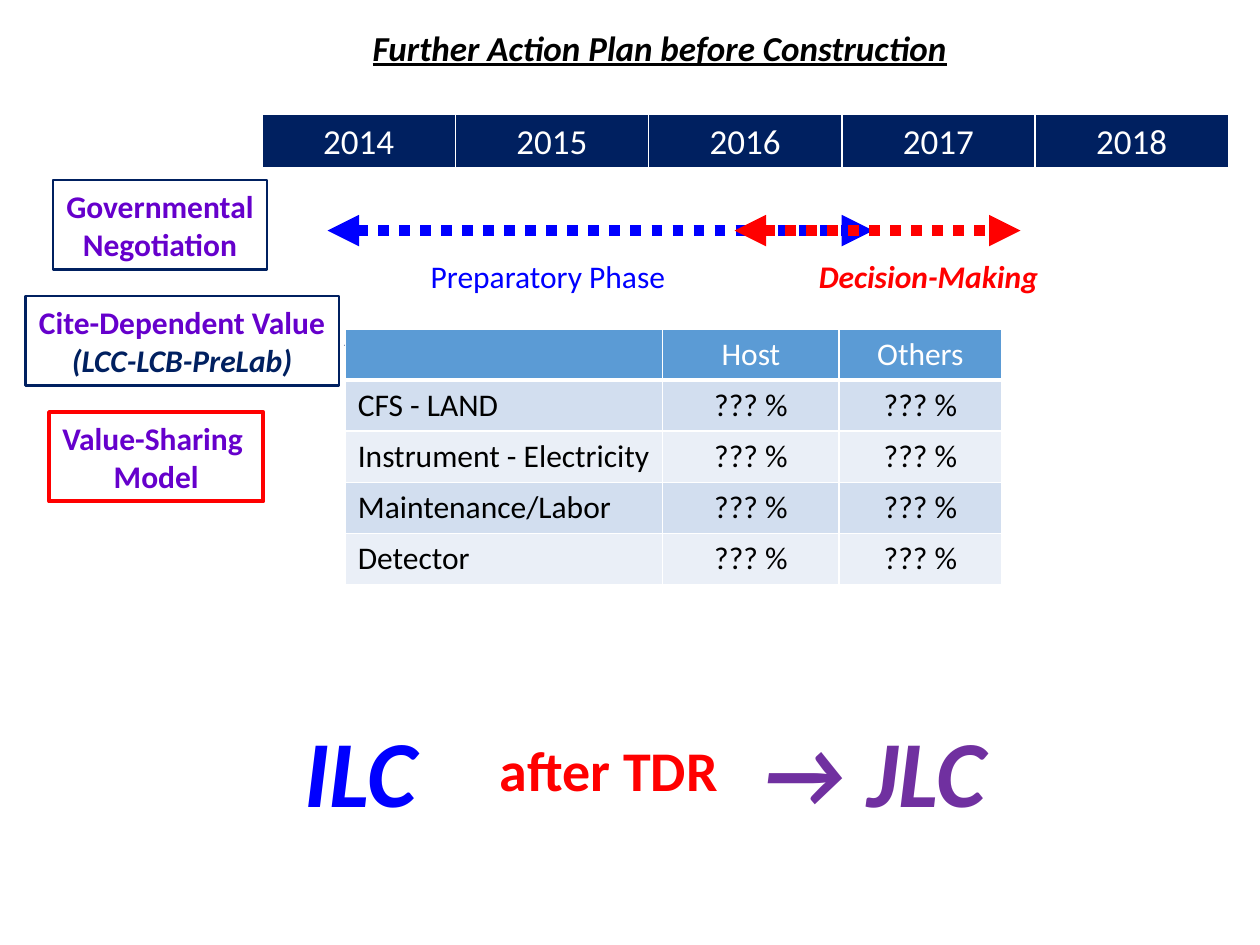
from lxml import etree
from pptx import Presentation
from pptx.dml.color import RGBColor
from pptx.enum.dml import MSO_LINE
from pptx.enum.shapes import MSO_CONNECTOR, MSO_SHAPE
from pptx.enum.text import MSO_ANCHOR, PP_ALIGN
from pptx.oxml.ns import qn
from pptx.util import Inches, Pt

LEFT, CENTER = PP_ALIGN.LEFT, PP_ALIGN.CENTER
MIDDLE = MSO_ANCHOR.MIDDLE
DOTTED = MSO_LINE.ROUND_DOT  # written as sysDot
FONT = "Calibri"
COLORS = {
    "navy": "002060", "violet": "6600CC", "purple": "7030A0",
    "blue": "0000FF", "red": "FF0000", "black": "000000", "white": "FFFFFF",
    "header": "5B9BD5", "band_dark": "D2DEEF", "band_light": "EAEFF7",
}


def rgb(name):
    return RGBColor.from_string(COLORS[name])


def style(paragraph, size, color, bold=False, italic=False, underline=False, align=LEFT):
    paragraph.alignment = align
    font = paragraph.font
    font.name, font.size = FONT, Pt(size)
    font.bold, font.italic, font.underline = bold, italic, underline
    font.color.rgb = rgb(color)


def add_label(slide, box, text, size, color, **look):
    label = slide.shapes.add_textbox(*map(Inches, box))
    label.text_frame.word_wrap = False
    paragraph = label.text_frame.paragraphs[0]
    paragraph.text = text
    style(paragraph, size, color, **look)


def add_topic(slide, box, lines, frame="navy", weight=1.5):
    """Framed two-line topic; lines are (text, color, italic)."""
    topic = slide.shapes.add_shape(MSO_SHAPE.RECTANGLE, *map(Inches, box))
    topic.shadow.inherit = False
    topic.fill.background()
    topic.line.color.rgb = rgb(frame)
    topic.line.width = Pt(weight)
    text_frame = topic.text_frame
    text_frame.word_wrap = False
    for i, (text, color, italic) in enumerate(lines):
        paragraph = text_frame.add_paragraph() if i else text_frame.paragraphs[0]
        paragraph.text = text
        style(paragraph, 18, color, bold=True, italic=italic, align=CENTER)


def add_period(slide, start, end, y, color, dash=None):
    """Thick double-headed arrow."""
    arrow = slide.shapes.add_connector(
        MSO_CONNECTOR.STRAIGHT, Inches(start), Inches(y), Inches(end), Inches(y))
    arrow.line.color.rgb = rgb(color)
    arrow.line.width = Pt(6)
    if dash:
        arrow.line.dash_style = dash
    line_xml = arrow.line._get_or_add_ln()
    for end_tag in ("a:headEnd", "a:tailEnd"):
        etree.SubElement(line_xml, qn(end_tag), type="triangle")
    etree.SubElement(arrow._element.spPr, qn("a:effectLst"))


def set_cell(cell, text, size, color, fill, align, bottom):
    cell_xml = cell._tc.get_or_add_tcPr()
    for side, weight in (("L", 1), ("R", 1), ("T", 1), ("B", bottom)):
        border = etree.SubElement(cell_xml, qn("a:ln" + side), w=str(Pt(weight)))
        solid = etree.SubElement(border, qn("a:solidFill"))
        etree.SubElement(solid, qn("a:srgbClr"), val=COLORS["white"])
    cell.fill.solid()
    cell.fill.fore_color.rgb = rgb(fill)
    cell.vertical_anchor = MIDDLE
    paragraph = cell.text_frame.paragraphs[0]
    paragraph.text = text
    style(paragraph, size, color, align=align)


def add_grid(slide, box, rows, widths, size, header_fill):
    """Table with a header row, then banded rows led by a left-aligned name."""
    grid = slide.shapes.add_table(len(rows), len(widths), *map(Inches, box)).table
    for column, width in zip(grid.columns, widths):
        column.width = Inches(width)
    for r, row in enumerate(rows):
        band = "band_dark" if r % 2 else "band_light"
        for c, text in enumerate(row):
            header = r == 0
            set_cell(grid.cell(r, c), text, size,
                     "white" if header else "black",
                     header_fill if header else band,
                     CENTER if header or c else LEFT,
                     3 if header else 1)


def add_years(slide, box):
    years = [str(year) for year in range(2014, 2019)]
    add_grid(slide, box, [years], [box[2] / len(years)] * len(years), 20, "navy")


def add_negotiation(slide, x, y):
    add_topic(slide, (x, y, 1.7, 0.71),
              [("Governmental", "violet", False), ("Negotiation", "violet", False)])
    add_label(slide, (x + 2.9, y + 0.56, 2.08, 0.4), "Preparatory Phase", 18, "blue")
    add_label(slide, (x + 5.98, y + 0.56, 1.96, 0.4), "Decision-Making", 18, "red",
              bold=True, italic=True)
    add_period(slide, x + 2.18, x + 6.51, y + 0.4, "blue", DOTTED)
    add_period(slide, x + 5.41, x + 7.68, y + 0.4, "red", DOTTED)


def add_dependent_value(slide, x, y):
    add_topic(slide, (x, y, 2.49, 0.71),
              [("Cite-Dependent Value", "violet", False),
               ("(LCC-LCB-PreLab)", "navy", True)])
    add_period(slide, x + 2.53, x + 3.46, y + 0.39, "navy")


def add_sharing_model(slide, x, y):
    add_topic(slide, (x, y, 1.7, 0.71),
              [("Value-Sharing ", "violet", False), ("Model", "violet", False)],
              "red", 2.25)


def add_shares(slide, box):
    items = ["CFS - LAND", "Instrument - Electricity", "Maintenance/Labor", "Detector"]
    rows = [["", "Host", "Others"]] + [[item, "??? %", "??? %"] for item in items]
    add_grid(slide, box, rows, [2.52, 1.4, 1.29], 18, "header")


def add_outlook(slide, x, y):
    big = {"bold": True, "italic": True, "align": CENTER}
    add_label(slide, (x, y, 1.1, 1.01), "ILC", 54, "blue", **big)
    add_label(slide, (x + 3.59, y, 2.06, 1.01), "→ JLC", 54, "purple", **big)
    add_label(slide, (x + 1.56, y + 0.18, 1.96, 0.64), "after TDR", 32, "red", bold=True)


def main():
    deck = Presentation()
    deck.slide_width, deck.slide_height = Inches(10), Inches(7.5)
    slide = deck.slides.add_slide(deck.slide_layouts[6])

    # Title and timeline
    add_label(slide, (2.86, 0.16, 4.88, 0.44), "Further Action Plan before Construction",
              20, "black", bold=True, italic=True, underline=True)
    add_years(slide, (2.08, 0.91, 7.67, 0.43))

    # Topics, then the share table over the end of the value arrow
    add_dependent_value(slide, 0.2, 2.35)
    add_negotiation(slide, 0.42, 1.43)
    add_sharing_model(slide, 0.39, 3.27)
    add_shares(slide, (2.74, 2.61, 5.21, 2.03))

    # Closing line
    add_outlook(slide, 2.31, 5.61)

    deck.save("out.pptx")


if __name__ == "__main__":
    main()
